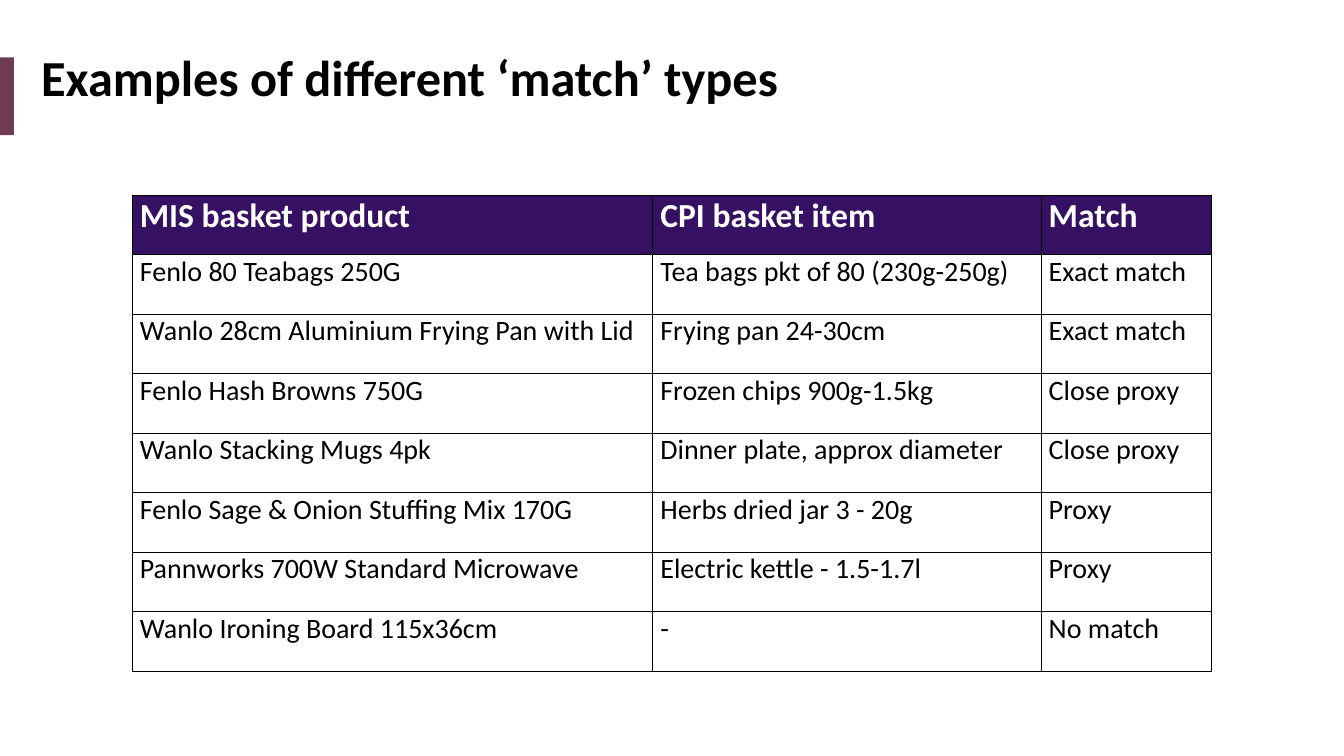
from lxml.etree import SubElement
from pptx import Presentation
from pptx.dml.color import RGBColor
from pptx.enum.shapes import MSO_SHAPE as Shape
from pptx.enum.text import MSO_ANCHOR as Anchor
from pptx.oxml.ns import qn
from pptx.util import Pt

FONT = "Calibri"
BLACK, WHITE, PLUM, PURPLE = "000000", "FFFFFF", "6F3B55", "361163"

HEADINGS = ("MIS basket product", "CPI basket item", "Match")
MATCHES = (
    ("Fenlo 80 Teabags 250G", "Tea bags pkt of 80 (230g-250g)", "Exact match"),
    ("Wanlo 28cm Aluminium Frying Pan with Lid", "Frying pan 24-30cm", "Exact match"),
    ("Fenlo Hash Browns 750G", "Frozen chips 900g-1.5kg", "Close proxy"),
    ("Wanlo Stacking Mugs 4pk", "Dinner plate, approx diameter", "Close proxy"),
    ("Fenlo Sage & Onion Stuffing Mix 170G", "Herbs dried jar 3 - 20g", "Proxy"),
    ("Pannworks 700W Standard Microwave", "Electric kettle - 1.5-1.7l", "Proxy"),
    ("Wanlo Ironing Board 115x36cm", "-", "No match"),
)
COLUMN_SHARES = (5.16, 3.85, 1.69)


def color(hex_string):
    return RGBColor.from_string(hex_string)


def write(frame, text, size, hex_string, bold):
    frame.text = text
    font = frame.paragraphs[0].runs[0].font
    font.name, font.size, font.bold = FONT, Pt(size), bold
    font.color.rgb = color(hex_string)


def add_title(slide, left, top, width, height):
    """Heading with an accent bar at the slide's left edge."""
    heading = slide.shapes.add_textbox(Pt(left), Pt(top), Pt(width), Pt(height))
    frame = heading.text_frame
    frame.word_wrap = True
    frame.vertical_anchor = Anchor.MIDDLE
    write(frame, "Examples of different ‘match’ types", 36, BLACK, True)

    accent = slide.shapes.add_shape(
        Shape.RECTANGLE, 0, Pt(top + 26), Pt(10), Pt(55.5))
    accent.shadow.inherit = False
    accent.fill.solid()
    accent.fill.fore_color.rgb = color(PLUM)
    accent.line.fill.background()


def add_borders(cell):
    properties = cell._tc.get_or_add_tcPr()
    for side in ("a:lnL", "a:lnR", "a:lnT", "a:lnB"):
        border = SubElement(properties, qn(side), w=str(Pt(1)))
        fill = SubElement(border, qn("a:solidFill"))
        SubElement(fill, qn("a:srgbClr"), val=BLACK)


def fill_cell(cell, text, is_heading):
    cell.margin_left = cell.margin_right = Pt(5.4)
    cell.margin_top = cell.margin_bottom = 0
    add_borders(cell)
    if is_heading:
        cell.fill.solid()
        cell.fill.fore_color.rgb = color(PURPLE)
        write(cell.text_frame, text, 24, WHITE, True)
    else:
        cell.fill.background()
        write(cell.text_frame, text, 20, BLACK, False)


def add_match_table(slide, left, top, width, height):
    rows = (HEADINGS, *MATCHES)
    table = slide.shapes.add_table(
        len(rows), len(HEADINGS), Pt(left), Pt(top), Pt(width), Pt(height)).table
    table.horz_banding = False
    for column, share in zip(table.columns, COLUMN_SHARES):
        column.width = Pt(width * share / sum(COLUMN_SHARES))
    for row_index, texts in enumerate(rows):
        table.rows[row_index].height = Pt(height / len(rows))
        for column_index, text in enumerate(texts):
            fill_cell(table.cell(row_index, column_index), text, row_index == 0)


def main():
    deck = Presentation()
    deck.slide_width, deck.slide_height = Pt(960), Pt(540)
    slide = deck.slides.add_slide(deck.slide_layouts[6])
    add_title(slide, 22.3, 15, 878, 79)
    add_match_table(slide, 94.5, 139.5, 771, 340)
    deck.save("out.pptx")


if __name__ == "__main__":
    main()
